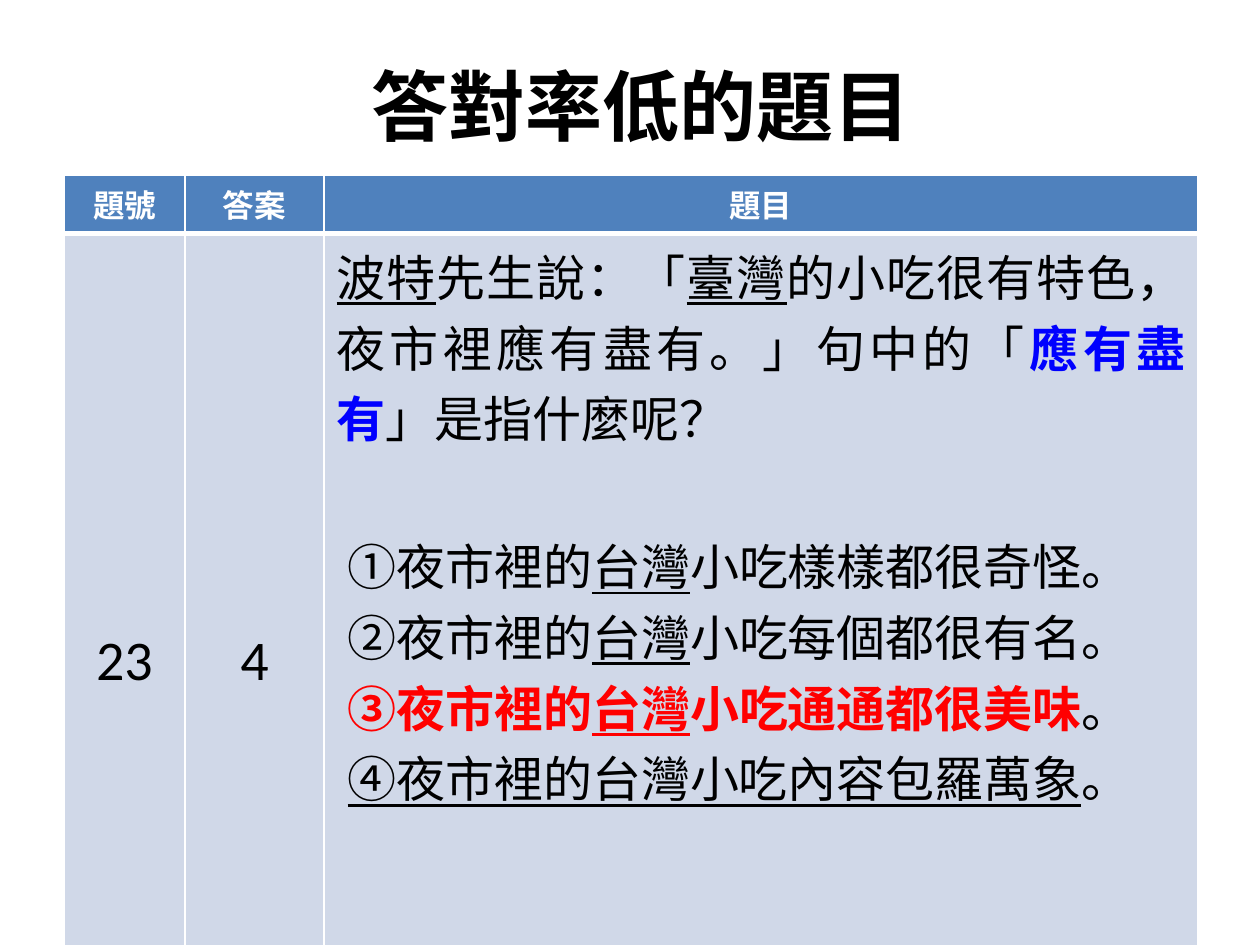
from lxml.etree import SubElement
from pptx import Presentation
from pptx.dml.color import RGBColor
from pptx.enum.text import MSO_ANCHOR, PP_ALIGN
from pptx.oxml.ns import qn
from pptx.util import Emu, Pt

LATIN, CJK = "Calibri", "Noto Sans CJK SC"
BLACK, WHITE, BLUE, RED = "000000", "FFFFFF", "0000FF", "FF0000"
HEADER_FILL, BODY_FILL = "4F81BD", "D0D8E8"
COLUMN_WIDTHS = (121, 139, 874)
ROW_HEIGHTS = (39, 857)

UNDERLINED = {"underline": True}
QUESTION = [
    ("波特", UNDERLINED),
    ("先生說：「", {}),
    ("臺灣", UNDERLINED),
    ("的小吃很有特色，夜市裡應有盡有。」句中的「", {}),
    ("應有盡有", {"color": BLUE, "bold": True}),
    ("」是指什麼呢？", {}),
]
ANSWER = {"color": RED, "bold": True}
OPTIONS = [
    [("①夜市裡的", {}), ("台灣", UNDERLINED), ("小吃樣樣都很奇怪。", {})],
    [("②夜市裡的", {}), ("台灣", UNDERLINED), ("小吃每個都很有名。", {})],
    [("③夜市裡的", ANSWER), ("台灣", ANSWER | UNDERLINED),
     ("小吃通通都很美味", ANSWER), ("。", {})],
    [("④夜市裡的台灣小吃內容包羅萬象", UNDERLINED), ("。", {})],
]


def px(length):
    return Emu(round(length * 914400 / 126))


def rgb(code):
    return RGBColor.from_string(code)


def add_run(paragraph, text, size, color=BLACK, bold=False, underline=False, face=CJK):
    run = paragraph.add_run()
    run.text = text
    font = run.font
    font.size, font.bold, font.underline = Pt(size), bold, underline
    font.name = face
    font.color.rgb = rgb(color)
    SubElement(run._r.get_or_add_rPr(), qn("a:ea"), typeface=CJK)


def add_runs(paragraph, pieces, size):
    for text, style in pieces:
        add_run(paragraph, text, size, **style)


def add_title(slide, text):
    title = slide.shapes.title
    title.left, title.top, title.width, title.height = map(px, (74, 26, 1134, 158))
    title.text_frame.vertical_anchor = MSO_ANCHOR.MIDDLE
    heading = title.text_frame.paragraphs[0]
    heading.alignment = PP_ALIGN.CENTER
    add_run(heading, text, 44, bold=True)


def style_cell(cell, fill, top, bottom):
    # Borders come before the fill in the cell properties
    properties = cell._tc.get_or_add_tcPr()
    for side, width in (("L", 1), ("R", 1), ("T", top), ("B", bottom)):
        border = SubElement(properties, qn(f"a:ln{side}"), w=str(Pt(width)))
        SubElement(SubElement(border, qn("a:solidFill")), qn("a:srgbClr"), val=WHITE)
    cell.fill.solid()
    cell.fill.fore_color.rgb = rgb(fill)


def fill_centered(cell, text, size, **style):
    cell.vertical_anchor = MSO_ANCHOR.MIDDLE
    paragraph = cell.text_frame.paragraphs[0]
    paragraph.alignment = PP_ALIGN.CENTER
    add_run(paragraph, text, size, face=LATIN, **style)


def fill_question(cell):
    frame = cell.text_frame
    stem = frame.paragraphs[0]
    stem.alignment = PP_ALIGN.JUSTIFY
    add_runs(stem, QUESTION, 28)
    for number, pieces in enumerate(OPTIONS):
        option = frame.add_paragraph()
        option._p.get_or_add_pPr().set("marL", str(px(11)))
        if number == 0:
            option.space_before = Pt(44)
        add_runs(option, pieces, 28)


def add_question_table(slide):
    table = slide.shapes.add_table(
        len(ROW_HEIGHTS), len(COLUMN_WIDTHS), px(64), px(175),
        px(sum(COLUMN_WIDTHS)), px(sum(ROW_HEIGHTS))).table
    for column, width in zip(table.columns, COLUMN_WIDTHS):
        column.width = px(width)
    for row, height in zip(table.rows, ROW_HEIGHTS):
        row.height = px(height)

    # Header row
    for column, label in enumerate(("題號", "答案", "題目")):
        style_cell(table.cell(0, column), HEADER_FILL, top=1, bottom=3)
        fill_centered(table.cell(0, column), label, 18, color=WHITE, bold=True)
        style_cell(table.cell(1, column), BODY_FILL, top=3, bottom=1)

    # Question row
    for column, value in enumerate(("23", "4")):
        fill_centered(table.cell(1, column), value, 32)
    fill_question(table.cell(1, 2))


def main():
    deck = Presentation()
    deck.slide_width, deck.slide_height = px(1260), px(945)
    slide = deck.slides.add_slide(deck.slide_layouts[5])
    add_title(slide, "答對率低的題目")
    add_question_table(slide)
    deck.save("out.pptx")


if __name__ == "__main__":
    main()
